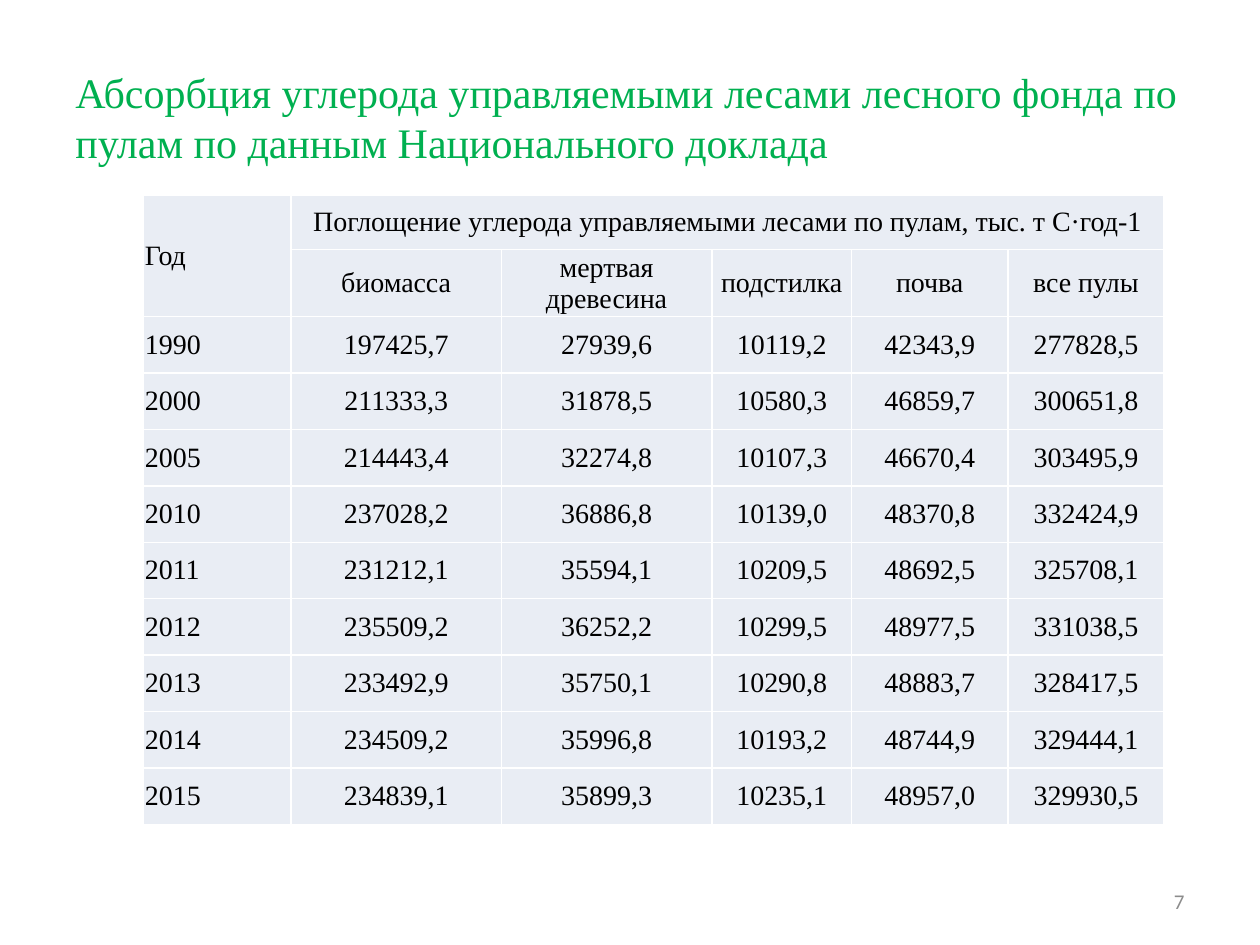
from dataclasses import dataclass

from lxml.etree import SubElement
from pptx import Presentation
from pptx.dml.color import RGBColor
from pptx.enum.text import MSO_ANCHOR, PP_ALIGN
from pptx.oxml.ns import qn
from pptx.util import Inches, Pt


@dataclass(frozen=True)
class Theme:
    serif: str = "Times New Roman"
    sans: str = "Calibri"
    title_color: str = "00B050"
    text_color: str = "000000"
    number_color: str = "8C8C8C"
    cell_fill: str = "E9EDF4"
    border_color: str = "FFFFFF"
    border_width: float = 1
    title_size: float = 24
    table_size: float = 16
    number_size: float = 12


THEME = Theme()

TITLE = ("Абсорбция углерода управляемыми лесами лесного фонда "
         "по пулам по данным Национального доклада")
YEAR_HEADING = "Год"
POOLS_HEADING = "Поглощение углерода управляемыми лесами по пулам, тыс. т С·год-1"
POOLS = ["биомасса", "мертвая древесина", "подстилка", "почва", "все пулы"]
ABSORPTION = [
    ["1990", "197425,7", "27939,6", "10119,2", "42343,9", "277828,5"],
    ["2000", "211333,3", "31878,5", "10580,3", "46859,7", "300651,8"],
    ["2005", "214443,4", "32274,8", "10107,3", "46670,4", "303495,9"],
    ["2010", "237028,2", "36886,8", "10139,0", "48370,8", "332424,9"],
    ["2011", "231212,1", "35594,1", "10209,5", "48692,5", "325708,1"],
    ["2012", "235509,2", "36252,2", "10299,5", "48977,5", "331038,5"],
    ["2013", "233492,9", "35750,1", "10290,8", "48883,7", "328417,5"],
    ["2014", "234509,2", "35996,8", "10193,2", "48744,9", "329444,1"],
    ["2015", "234839,1", "35899,3", "10235,1", "48957,0", "329930,5"],
]

COLUMN_WIDTHS = [1.17, 1.67, 1.67, 1.11, 1.24, 1.24]
HEADING_HEIGHT = 0.43
YEARS_HEIGHT = 4.03
CELL_FORMAT = {
    "margin_left": Inches(0.01),
    "margin_right": Inches(0.01),
    "margin_top": 0,
    "margin_bottom": 0,
    "vertical_anchor": MSO_ANCHOR.MIDDLE,
}


def write_text(frame, text, font, size, color, align=PP_ALIGN.LEFT):
    paragraph = frame.paragraphs[0]
    paragraph.alignment = align
    run = paragraph.add_run()
    run.text = text
    for name, value in {"name": font, "size": Pt(size), "bold": False}.items():
        setattr(run.font, name, value)
    run.font.color.rgb = RGBColor.from_string(color)


def add_label(slide, box, *text_format):
    frame = slide.shapes.add_textbox(*map(Inches, box)).text_frame
    frame.word_wrap = True
    frame.vertical_anchor = MSO_ANCHOR.MIDDLE
    write_text(frame, *text_format)


def format_cell(cell):
    for name, value in CELL_FORMAT.items():
        setattr(cell, name, value)
    # Borders come before the fill in the cell properties
    properties = cell._tc.get_or_add_tcPr()
    for side in ("a:lnL", "a:lnR", "a:lnT", "a:lnB"):
        border = SubElement(properties, qn(side), w=str(Pt(THEME.border_width)))
        paint = SubElement(border, qn("a:solidFill"))
        SubElement(paint, qn("a:srgbClr"), val=THEME.border_color)
    cell.fill.solid()
    cell.fill.fore_color.rgb = RGBColor.from_string(THEME.cell_fill)


def add_absorption_table(slide, left, top):
    rows = [[YEAR_HEADING, POOLS_HEADING], [None, *POOLS], *ABSORPTION]
    height = 2 * HEADING_HEIGHT + YEARS_HEIGHT
    table = slide.shapes.add_table(
        len(rows), len(COLUMN_WIDTHS), Inches(left), Inches(top),
        Inches(sum(COLUMN_WIDTHS)), Inches(height)).table
    table.first_row = table.horz_banding = False

    # Column widths and row heights
    for column, width in zip(table.columns, COLUMN_WIDTHS):
        column.width = Inches(width)
    for index, row in enumerate(table.rows):
        row.height = Inches(
            HEADING_HEIGHT if index < 2 else YEARS_HEIGHT / len(ABSORPTION))

    # Merged headings
    table.cell(0, 0).merge(table.cell(1, 0))
    table.cell(0, 1).merge(table.cell(0, len(POOLS)))

    # Cell formats and contents
    for cell in table.iter_cells():
        format_cell(cell)
    for r, values in enumerate(rows):
        for c, value in enumerate(values):
            if value is not None:
                write_text(table.cell(r, c).text_frame, value, THEME.serif,
                           THEME.table_size, THEME.text_color,
                           PP_ALIGN.CENTER if c else PP_ALIGN.LEFT)


def main():
    presentation = Presentation()
    presentation.slide_width = Inches(10)
    presentation.slide_height = Inches(7.5)
    slide = presentation.slides.add_slide(presentation.slide_layouts[6])

    # Title
    add_label(slide, (0.5, 0.3, 9, 1.25), TITLE, THEME.serif,
              THEME.title_size, THEME.title_color)
    # Carbon absorption by year and pool
    add_absorption_table(slide, 1.14, 1.55)
    # Slide number
    add_label(slide, (7.17, 6.95, 2.33, 0.4), "7", THEME.sans,
              THEME.number_size, THEME.number_color, PP_ALIGN.RIGHT)

    presentation.save("out.pptx")


if __name__ == "__main__":
    main()
